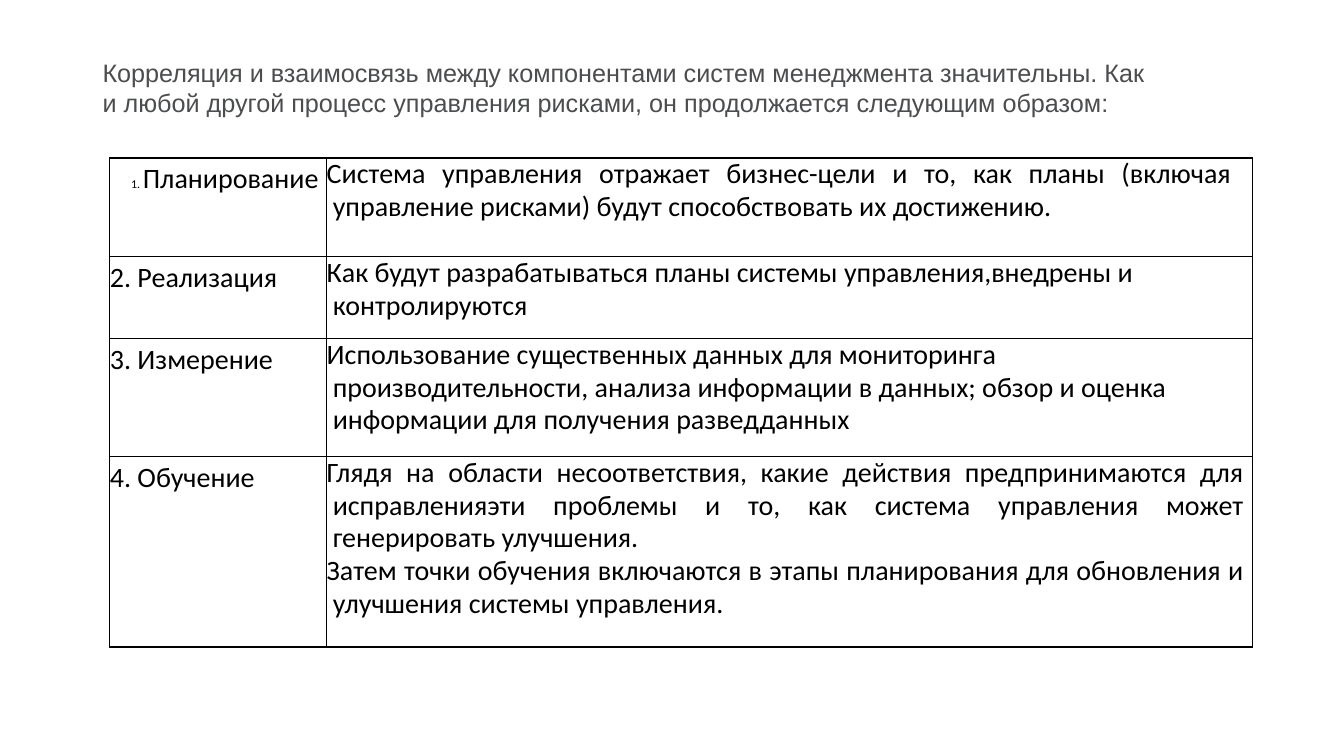
from lxml import etree
from pptx import Presentation
from pptx.dml.color import RGBColor
from pptx.enum.text import MSO_ANCHOR, PP_ALIGN
from pptx.oxml.ns import qn
from pptx.util import Pt

TOP = MSO_ANCHOR.TOP
JUSTIFY, LEFT = PP_ALIGN.JUSTIFY, PP_ALIGN.LEFT
COLORS = {"intro": "4C4D4F", "text": "000000", "border": "000000"}

INTRO = ("Корреляция и взаимосвязь между компонентами систем менеджмента значительны. "
         "Как и любой другой процесс управления рисками, он продолжается следующим образом:")

# number, stage, description paragraphs, alignment, right margin, row height
STAGES = [
    ("1. ", "Планирование",
     ["Система управления отражает бизнес-цели и то, как планы (включая управление рисками) "
      "будут способствовать их достижению."], JUSTIFY, 15, 70.7),
    ("2. ", "Реализация",
     ["Как будут разрабатываться планы системы управления,внедрены и контролируются"],
     LEFT, 15, 58.5),
    ("3. ", "Измерение",
     ["Использование существенных данных для мониторинга производительности, анализа "
      "информации в данных; обзор и оценка информации для получения разведданных"],
     LEFT, 15, 84.2),
    ("4. ", "Обучение",
     ["Глядя на области несоответствия, какие действия предпринимаются для исправленияэти "
      "проблемы и то, как система управления может генерировать улучшения.",
      "Затем точки обучения включаются в этапы планирования для обновления и улучшения "
      "системы управления."], JUSTIFY, 6, 136),
]


def add_text(p, text, size=20, font="Calibri", color="text"):
    r = p.add_run()
    r.text = text
    r.font.size = Pt(size)
    r.font.name = font
    r.font.color.rgb = RGBColor.from_string(COLORS[color])


def format_paragraph(p, align=LEFT, spacing=0.95, before=0, first=-4.3):
    p.alignment = align
    p.line_spacing = spacing
    p.space_before = Pt(before)
    pPr = p._p.get_or_add_pPr()
    pPr.set("marL", str(Pt(4.3)))
    pPr.set("indent", str(Pt(first)))


def prepare_cell(cell, top=0, right=0):
    """Clear the fill, set the margins and draw a thin border on every side."""
    cell.margin_left = cell.margin_bottom = 0
    cell.margin_top, cell.margin_right = Pt(top), Pt(right)
    cell.vertical_anchor = TOP
    tcPr = cell._tc.get_or_add_tcPr()
    for side in ("a:lnL", "a:lnR", "a:lnT", "a:lnB"):
        ln = etree.SubElement(tcPr, qn(side), w=str(Pt(1)))
        fill = etree.SubElement(ln, qn("a:solidFill"))
        etree.SubElement(fill, qn("a:srgbClr"), val=COLORS["border"])
    cell.fill.background()


def fill_label(cell, number, stage):
    is_first = number == STAGES[0][0]
    prepare_cell(cell, top=14.9)
    p = cell.text_frame.paragraphs[0]
    format_paragraph(p, spacing=Pt(12.5), before=2.4, first=10.8 if is_first else -4.3)
    add_text(p, number, size=8.5 if is_first else 20)
    add_text(p, stage)


def fill_description(cell, paragraphs, align, right):
    prepare_cell(cell, right=right)
    tf = cell.text_frame
    for i, text in enumerate(paragraphs):
        p = tf.add_paragraph() if i else tf.paragraphs[0]
        format_paragraph(p, align, before=0 if i else 1.4)
        add_text(p, text)


def add_stage_table(s):
    heights = [stage[-1] for stage in STAGES]
    frame = s.shapes.add_table(len(STAGES), 2, Pt(78.5), Pt(112.8), Pt(816), Pt(sum(heights)))
    table = frame.table
    table.first_row = table.horz_banding = False
    for column, width in zip(table.columns, (154.9, 661.1)):
        column.width = Pt(width)
    for row, (number, stage, paragraphs, align, right, height) in zip(table.rows, STAGES):
        row.height = Pt(height)
        fill_label(row.cells[0], number, stage)
        fill_description(row.cells[1], paragraphs, align, right)


def add_intro(s):
    sp = s.shapes.add_textbox(Pt(66.2), Pt(36.7), Pt(758.9), Pt(94.3))
    tf = sp.text_frame
    tf.word_wrap = True
    tf.vertical_anchor = TOP
    tf.margin_top = Pt(4.3)
    add_text(tf.paragraphs[0], INTRO, size=18, font="Arial", color="intro")


def main():
    prs = Presentation()
    prs.slide_width, prs.slide_height = Pt(960), Pt(540)
    s = prs.slides.add_slide(prs.slide_layouts[6])
    add_stage_table(s)
    add_intro(s)
    prs.save("out.pptx")


if __name__ == "__main__":
    main()
